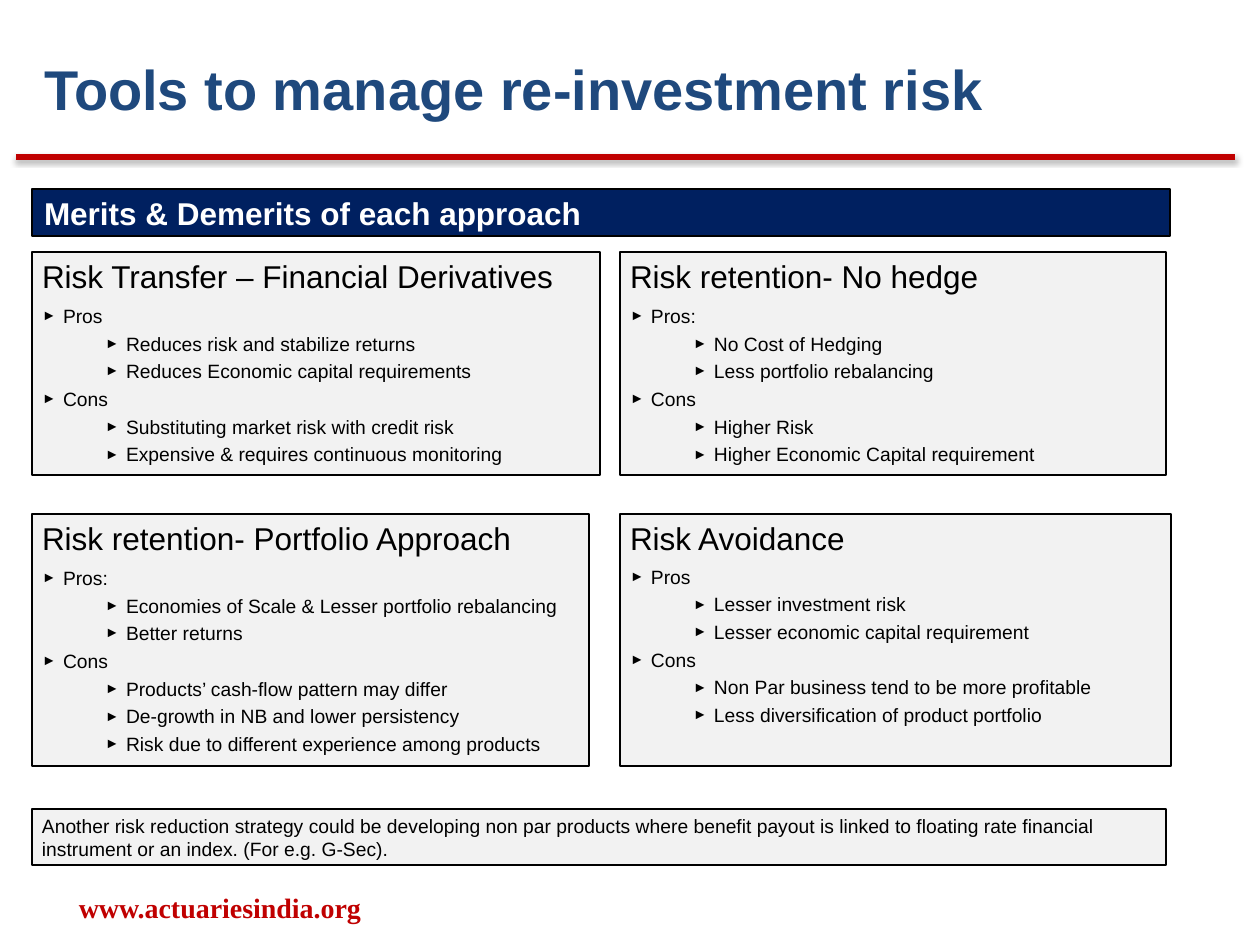
import lxml.etree
import pptx
import pptx.dml.color
import pptx.enum.shapes
import pptx.enum.text
import pptx.oxml.ns
import pptx.util

RGB = pptx.dml.color.RGBColor
NAVY = RGB(0x00, 0x20, 0x60)
BLUE = RGB(0x1F, 0x49, 0x7D)
RED = RGB(0xC0, 0x00, 0x00)
PALE = RGB(0xF2, 0xF2, 0xF2)
BLACK = RGB(0x00, 0x00, 0x00)
WHITE = RGB(0xFF, 0xFF, 0xFF)

ALIGN = pptx.enum.text.PP_ALIGN
ANCHOR = pptx.enum.text.MSO_ANCHOR
SCALE = 914400 / 126  # EMU in one px

# Each panel: place, gap under the heading, heading, then (level, text) items
LEFT, RIGHT = 32, 620
UPPER, LOWER = (252, 223), (514, 252)  # top, height
PANELS = [
    (LEFT, UPPER, 568, 5.3, "Risk Transfer – Financial Derivatives", [
        (0, "Pros"),
        (1, "Reduces risk and stabilize returns"),
        (1, "Reduces Economic capital requirements"),
        (0, "Cons"),
        (1, "Substituting market risk with credit risk"),
        (1, "Expensive & requires continuous monitoring")]),
    (RIGHT, UPPER, 546, 5.3, "Risk retention- No hedge", [
        (0, "Pros:"),
        (1, "No Cost of Hedging"),
        (1, "Less portfolio rebalancing"),
        (0, "Cons"),
        (1, "Higher Risk"),
        (1, "Higher Economic Capital requirement")]),
    (LEFT, LOWER, 557, 5.3, "Risk retention- Portfolio Approach", [
        (0, "Pros:"),
        (1, "Economies of Scale & Lesser portfolio rebalancing"),
        (1, "Better returns"),
        (0, "Cons"),
        (1, "Products’ cash-flow pattern may differ"),
        (1, "De-growth in NB and lower persistency"),
        (1, "Risk due to different experience among products")]),
    (RIGHT, LOWER, 551, 4.6, "Risk Avoidance", [
        (0, "Pros"),
        (1, "Lesser investment risk"),
        (1, "Lesser economic capital requirement"),
        (0, "Cons"),
        (1, "Non Par business tend to be more profitable"),
        (1, "Less diversification of product portfolio")]),
]


def px(num):
    return pptx.util.Emu(round(num * SCALE))


def add(node, tag, **attrs):
    return lxml.etree.SubElement(node, pptx.oxml.ns.qn(tag), attrs)


class Deck:
    font = "Arial"
    ink = BLACK

    def __init__(self, wide, high):
        self.file = pptx.Presentation()
        self.file.slide_width, self.file.slide_height = px(wide), px(high)
        layout = self.file.slide_layouts.get_by_name("Comparison")
        self.slide = self.file.slides.add_slide(layout)
        self.holds = list(self.slide.placeholders)[1:]

    def place(self, shape, x, y, w, h):
        shape.left, shape.top = px(x), px(y)
        shape.width, shape.height = px(w), px(h)

    def frame(self, shape, side, top, anchor):
        frame = shape.text_frame
        frame.word_wrap = True
        frame.auto_size = pptx.enum.text.MSO_AUTO_SIZE.NONE
        frame.vertical_anchor = anchor
        frame.margin_left = frame.margin_right = px(side)
        frame.margin_top = frame.margin_bottom = px(top)
        return frame

    def paint(self, shape, fill):
        shape.fill.solid()
        shape.fill.fore_color.rgb = fill
        shape.line.color.rgb = BLACK
        shape.line.width = pptx.util.Pt(0.75)

    def fill_text(self, para, text, size, color=None, bold=False, font=None,
                  align=ALIGN.LEFT, after=0):
        para.text = text
        para.alignment = align
        para.space_before = pptx.util.Pt(0)
        para.space_after = pptx.util.Pt(after)
        for run in para.runs:
            run.font.name = font or self.font
            run.font.size = pptx.util.Pt(size)
            run.font.bold = bold
            run.font.color.rgb = color or self.ink

    def indent(self, para, left, hang, mark=None):
        props = para._p.get_or_add_pPr()
        props.set("marL", str(px(left)))
        props.set("indent", str(px(-hang)))
        if mark:
            add(props, "a:buSzPct", val="75000")
            add(props, "a:buFont", typeface=self.font)
            add(props, "a:buChar", char=mark)
        else:
            add(props, "a:buNone")

    def title(self, text, *box):
        shape = self.slide.shapes.title
        self.place(shape, *box)
        frame = self.frame(shape, 12, 12, ANCHOR.TOP)
        self.fill_text(frame.paragraphs[0], text, 32, BLUE, True)

    def rule(self, x, y, end):
        kind = pptx.enum.shapes.MSO_CONNECTOR.STRAIGHT
        line = self.slide.shapes.add_connector(kind, px(x), px(y), px(end), px(y))
        line.line.color.rgb = RED
        line.line.width = pptx.util.Pt(3)
        # Soft shadow below the line
        shade = add(add(line._element.spPr, "a:effectLst"), "a:outerShdw",
                    blurRad="40000", dist="20000", dir="5400000", rotWithShape="0")
        add(add(shade, "a:srgbClr", val="000000"), "a:alpha", val="38000")

    def bar(self, text, box, fill, side, top, anchor, **style):
        kind = pptx.enum.shapes.MSO_SHAPE.RECTANGLE
        shape = self.slide.shapes.add_shape(kind, *map(px, box))
        shape.shadow.inherit = False
        self.paint(shape, fill)
        frame = self.frame(shape, side, top, anchor)
        self.fill_text(frame.paragraphs[0], text, **style)

    def label(self, text, box, **style):
        shape = self.slide.shapes.add_textbox(*map(px, box))
        frame = self.frame(shape, 12, 6, ANCHOR.MIDDLE)
        self.fill_text(frame.paragraphs[0], text, **style)

    def panel(self, hold, x, band, wide, gap, head, items):
        top, high = band
        self.place(hold, x, top, wide, high)
        self.paint(hold, PALE)
        frame = self.frame(hold, 10, 5, ANCHOR.TOP)
        first = frame.paragraphs[0]
        self.indent(first, 0, 0)
        self.fill_text(first, head, 18, after=gap)
        for level, text in items:
            para = frame.add_paragraph()
            para.level = level
            self.indent(para, 21 + 63 * level, 21, "►")
            self.fill_text(para, text, 11, after=2.6)


def main():
    deck = Deck(1260, 945)

    # Heading
    deck.title("Tools to manage re-investment risk", 32, 42, 1061, 84)
    deck.rule(16, 157, 1235)
    deck.bar("Merits & Demerits of each approach", (32, 189, 1138, 47), NAVY,
             12, 6, ANCHOR.MIDDLE, size=18, color=WHITE, bold=True)

    # Four approaches
    for hold, panel in zip(deck.holds, PANELS):
        deck.panel(hold, *panel)

    # Note and footer
    deck.bar("Another risk reduction strategy could be developing non par products "
             "where benefit payout is linked to floating rate financial instrument "
             "or an index. (For e.g. G-Sec).", (32, 809, 1134, 56), PALE,
             10, 5, ANCHOR.TOP, size=11)
    deck.label("www.actuariesindia.org", (20, 882, 400, 50), size=16, color=RED,
               bold=True, font="Times New Roman", align=ALIGN.CENTER)

    deck.file.save("out.pptx")


if __name__ == "__main__":
    main()
